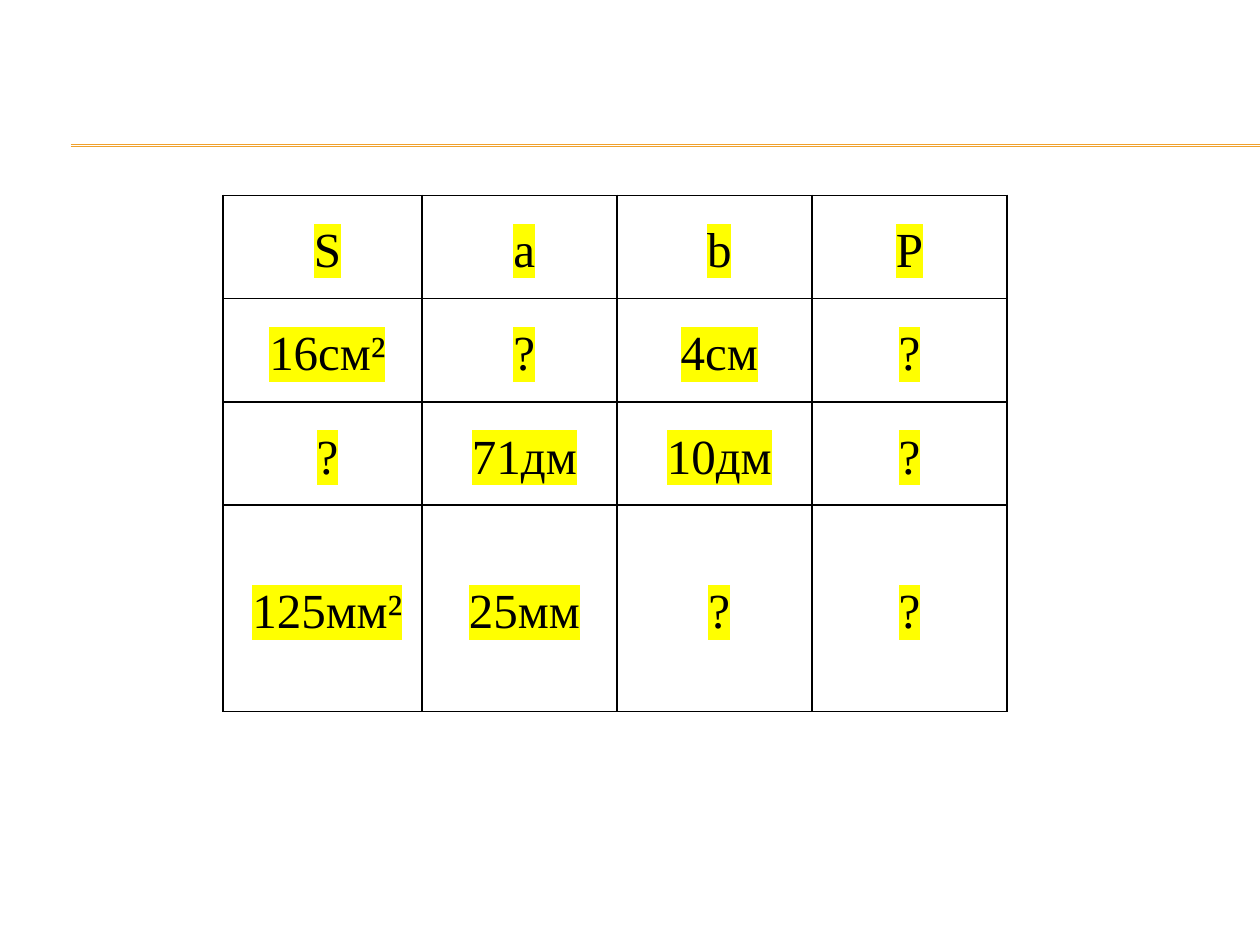
from lxml.etree import SubElement
from pptx import Presentation
from pptx.dml.color import RGBColor
from pptx.enum.shapes import MSO_CONNECTOR
from pptx.enum.text import MSO_ANCHOR, PP_ALIGN
from pptx.oxml.ns import qn
from pptx.util import Cm, Pt

ROWS = [
    ("S", "a", "b", "P"),
    ("16см²", "?", "4см", "?"),
    ("?", "71дм", "10дм", "?"),
    ("125мм²", "25мм", "?", "?"),
]
COLORS = {"rule": "F0A22E", "text": "000000", "border": "000000",
          "cell": "FFFFFF", "highlight": "FFFF00"}
FONT = "Times New Roman"
SLIDE_WIDTH, SLIDE_HEIGHT = 25.4, 19.05
RULE_LEFT, RULE_TOPS = 1.43, (2.92, 2.95)
TABLE_LEFT, TABLE_TOP = 4.5, 3.94
COLUMN_WIDTHS = [4.01, 3.93, 3.93, 3.93]
ROW_HEIGHTS = [2.08, 2.08, 2.08, 4.16]
INSET = 0.19


def color(name):
    return RGBColor.from_string(COLORS[name])


def add_color(parent, name):
    SubElement(parent, qn("a:srgbClr"), val=COLORS[name])


def add_rule(slide, top):
    rule = slide.shapes.add_connector(
        MSO_CONNECTOR.STRAIGHT, Cm(RULE_LEFT), Cm(top), Cm(SLIDE_WIDTH), Cm(top))
    rule.line.color.rgb = color("rule")
    rule.line.width = Pt(0.75)
    SubElement(rule._element.spPr, qn("a:effectLst"))


def add_borders(cell):
    properties = cell._tc.get_or_add_tcPr()
    for side in ("lnL", "lnR", "lnT", "lnB"):
        line = SubElement(properties, qn(f"a:{side}"), w=str(Pt(1)))
        add_color(SubElement(line, qn("a:solidFill")), "border")


def fill_cell(cell, text, is_last):
    add_borders(cell)
    cell.fill.solid()
    cell.fill.fore_color.rgb = color("cell")
    cell.vertical_anchor = MSO_ANCHOR.MIDDLE
    cell.margin_left = Cm(INSET)
    cell.margin_right = Cm(INSET if is_last else 0)
    cell.margin_top = cell.margin_bottom = 0

    paragraph = cell.text_frame.paragraphs[0]
    paragraph.alignment = PP_ALIGN.CENTER
    paragraph.line_spacing = 1.15
    paragraph.space_after = Pt(7.5)
    paragraph.font.name = FONT
    paragraph.font.size = Pt(28)
    paragraph.font.color.rgb = color("text")
    run = paragraph.add_run()
    run.text = text
    run_properties = run._r.get_or_add_rPr()
    add_color(SubElement(run_properties, qn("a:highlight")), "highlight")


def add_measure_table(slide):
    table = slide.shapes.add_table(
        len(ROWS), len(COLUMN_WIDTHS), Cm(TABLE_LEFT), Cm(TABLE_TOP),
        Cm(sum(COLUMN_WIDTHS)), Cm(sum(ROW_HEIGHTS))).table
    for column, width in zip(table.columns, COLUMN_WIDTHS):
        column.width = Cm(width)
    for row, height, texts in zip(table.rows, ROW_HEIGHTS, ROWS):
        row.height = Cm(height)
        for index, (cell, text) in enumerate(zip(row.cells, texts)):
            fill_cell(cell, text, index == len(texts) - 1)


def main():
    presentation = Presentation()
    presentation.slide_width = Cm(SLIDE_WIDTH)
    presentation.slide_height = Cm(SLIDE_HEIGHT)
    slide = presentation.slides.add_slide(presentation.slide_layouts[6])
    for top in RULE_TOPS:
        add_rule(slide, top)
    add_measure_table(slide)
    presentation.save("out.pptx")


if __name__ == "__main__":
    main()
